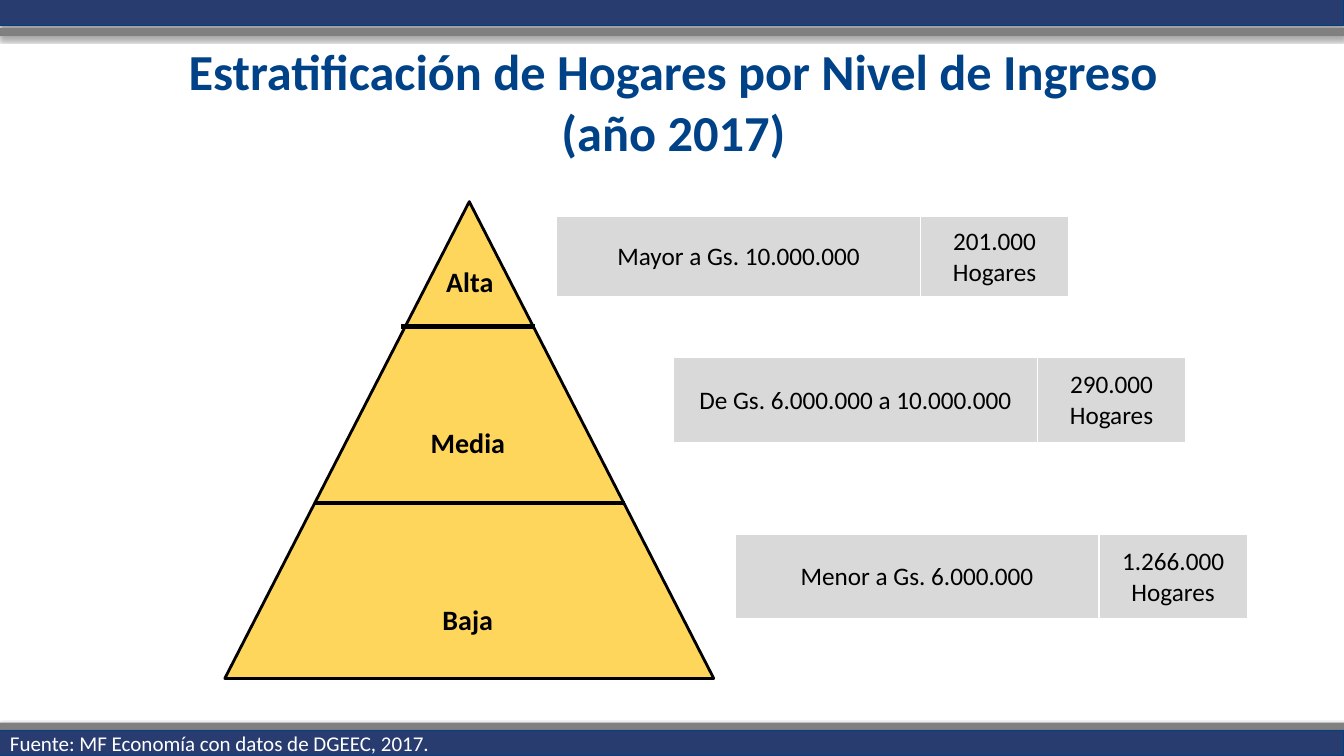
from dataclasses import dataclass

from lxml.etree import SubElement
from pptx import Presentation
from pptx.dml.color import RGBColor
from pptx.enum.shapes import MSO_CONNECTOR, MSO_SHAPE
from pptx.enum.text import MSO_ANCHOR, PP_ALIGN
from pptx.oxml.ns import qn
from pptx.shapes.autoshape import Shape
from pptx.slide import Slide
from pptx.text.text import TextFrame
from pptx.util import Inches, Pt

WIDTH, HEIGHT = Inches(13.33), Inches(7.5)
NAVY, GRAY, BLACK, WHITE = "293C70", "808080", "000000", "FFFFFF"
COLUMN_SHARES = (27.08, 11.03)
CELL_BORDERS = {"lnL": 1, "lnR": 1, "lnT": 1, "lnB": 3}


@dataclass(frozen=True)
class Area:
    """A rectangle in percent of the slide's width and height."""
    left: float
    top: float
    width: float
    height: float

    def lengths(self) -> tuple[int, int, int, int]:
        return across(self.left), down(self.top), across(self.width), down(self.height)


@dataclass(frozen=True)
class Bar:
    area: Area
    fill: str
    line: str | None = None


@dataclass(frozen=True)
class Label:
    text: str
    area: Area
    format: dict
    align: PP_ALIGN = PP_ALIGN.CENTER
    anchor: MSO_ANCHOR = MSO_ANCHOR.TOP
    side_inset: float = 0


@dataclass(frozen=True)
class Divider:
    left: float
    right: float
    level: float


@dataclass(frozen=True)
class IncomeBand:
    income: str
    households: str
    left: float
    top: float
    height: float


BARS = [
    Bar(Area(0, 95.6, 100, 1.07), GRAY),
    Bar(Area(0, 96.67, 100, 3.33), NAVY, "004184"),
    Bar(Area(0, 0, 100, 3.33), NAVY, "004184"),
    Bar(Area(0, 3.73, 100, 1.07), GRAY),
]
PYRAMID = Area(16.73, 26.67, 36.38, 63.07)
DIVIDERS = [Divider(29.86, 39.83, 43.2), Divider(23.33, 46.51, 66.53)]
STRATUM = {"size": Pt(20), "bold": True, "color": BLACK}
LABELS = [
    Label("Alta", Area(31.43, 34.4, 7.05, 5.87), STRATUM),
    Label("Media", Area(31.28, 55.6, 7.05, 5.87), STRATUM),
    Label("Baja", Area(31.28, 79.07, 7.05, 5.87), STRATUM),
    Label("Estratificación de Hogares por Nivel de Ingreso\v(año 2017)",
          Area(5.1, 8, 90.02, 10.67),
          {"size": Pt(36), "bold": True, "color": "004287"}, anchor=MSO_ANCHOR.MIDDLE),
    Label("Fuente: MF Economía con datos de DGEEC, 2017.", Area(0, 96, 77.34, 4.67),
          {"size": Pt(15), "color": WHITE}, align=PP_ALIGN.LEFT, side_inset=0.1),
]
BANDS = [
    IncomeBand("Mayor a Gs. 10.000.000", "201.000 Hogares", 41.41, 28.67, 10.67),
    IncomeBand("De Gs. 6.000.000 a 10.000.000", "290.000 Hogares", 50.11, 47.33, 11.33),
    IncomeBand("Menor a Gs. 6.000.000", "1.266.000 Hogares", 54.69, 70.67, 11.33),
]


def across(percent: float) -> int:
    return round(WIDTH * percent / 100)


def down(percent: float) -> int:
    return round(HEIGHT * percent / 100)


def rgb(color: str) -> RGBColor:
    return RGBColor.from_string(color)


def write(frame: TextFrame, text: str, format: dict, align: PP_ALIGN) -> None:
    frame.text = text
    paragraph = frame.paragraphs[0]
    paragraph.alignment = align
    for run in paragraph.runs:
        run.font.name = "Calibri"
        for name, value in format.items():
            if name == "color":
                run.font.color.rgb = rgb(value)
            else:
                setattr(run.font, name, value)


def add_filled(slide: Slide, kind: MSO_SHAPE, area: Area, fill: str,
               line: str | None, line_width: float) -> Shape:
    shape = slide.shapes.add_shape(kind, *area.lengths())
    shape.shadow.inherit = False
    shape.fill.solid()
    shape.fill.fore_color.rgb = rgb(fill)
    if line:
        shape.line.color.rgb = rgb(line)
        shape.line.width = Pt(line_width)
    else:
        shape.line.fill.background()
    return shape


def add_bar(slide: Slide, bar: Bar) -> None:
    shape = add_filled(slide, MSO_SHAPE.RECTANGLE, bar.area, bar.fill, bar.line, 0.75)
    effects = shape.element.spPr.find(qn("a:effectLst"))
    shadow = SubElement(effects, qn("a:outerShdw"), blurRad=str(Pt(3.1)),
                        dist=str(Pt(1.8)), dir="5400000", rotWithShape="0")
    color = SubElement(shadow, qn("a:srgbClr"), val=BLACK)
    SubElement(color, qn("a:alpha"), val="35000")


def add_pyramid(slide: Slide) -> None:
    shape = add_filled(slide, MSO_SHAPE.ISOSCELES_TRIANGLE, PYRAMID, "FFC000", BLACK, 2)
    color = shape.element.spPr.find(qn("a:solidFill")).find(qn("a:srgbClr"))
    SubElement(color, qn("a:alpha"), val="64000")


def add_divider(slide: Slide, divider: Divider) -> None:
    level = down(divider.level)
    connector = slide.shapes.add_connector(
        MSO_CONNECTOR.STRAIGHT, across(divider.left), level, across(divider.right), level)
    connector.line.color.rgb = rgb(BLACK)
    connector.line.width = Pt(3)
    SubElement(connector.element.spPr, qn("a:effectLst"))


def add_label(slide: Slide, label: Label) -> None:
    frame = slide.shapes.add_textbox(*label.area.lengths()).text_frame
    frame.word_wrap = True
    frame.vertical_anchor = label.anchor
    frame.margin_left = frame.margin_right = Inches(label.side_inset)
    write(frame, label.text, label.format, label.align)


def add_band(slide: Slide, band: IncomeBand) -> None:
    area = Area(band.left, band.top, sum(COLUMN_SHARES), band.height)
    table = slide.shapes.add_table(1, len(COLUMN_SHARES), *area.lengths()).table
    table.first_row = table.horz_banding = False
    for index, text in enumerate((band.income, band.households)):
        table.columns[index].width = across(COLUMN_SHARES[index])
        cell = table.cell(0, index)
        cell.vertical_anchor = MSO_ANCHOR.MIDDLE
        write(cell.text_frame, text, {"size": Pt(18), "color": BLACK}, PP_ALIGN.CENTER)
        properties = cell._tc.get_or_add_tcPr()
        for side, width in CELL_BORDERS.items():
            border = SubElement(properties, qn(f"a:{side}"), w=str(Pt(width)))
            SubElement(SubElement(border, qn("a:solidFill")), qn("a:srgbClr"), val=WHITE)
        cell.fill.solid()
        cell.fill.fore_color.rgb = rgb("D9D9D9")


def main() -> None:
    presentation = Presentation()
    presentation.slide_width, presentation.slide_height = WIDTH, HEIGHT
    slide = presentation.slides.add_slide(presentation.slide_layouts[6])
    for bar in BARS:
        add_bar(slide, bar)
    add_pyramid(slide)
    for divider in DIVIDERS:
        add_divider(slide, divider)
    for label in LABELS:
        add_label(slide, label)
    for band in BANDS:
        add_band(slide, band)
    presentation.save("out.pptx")


if __name__ == "__main__":
    main()
